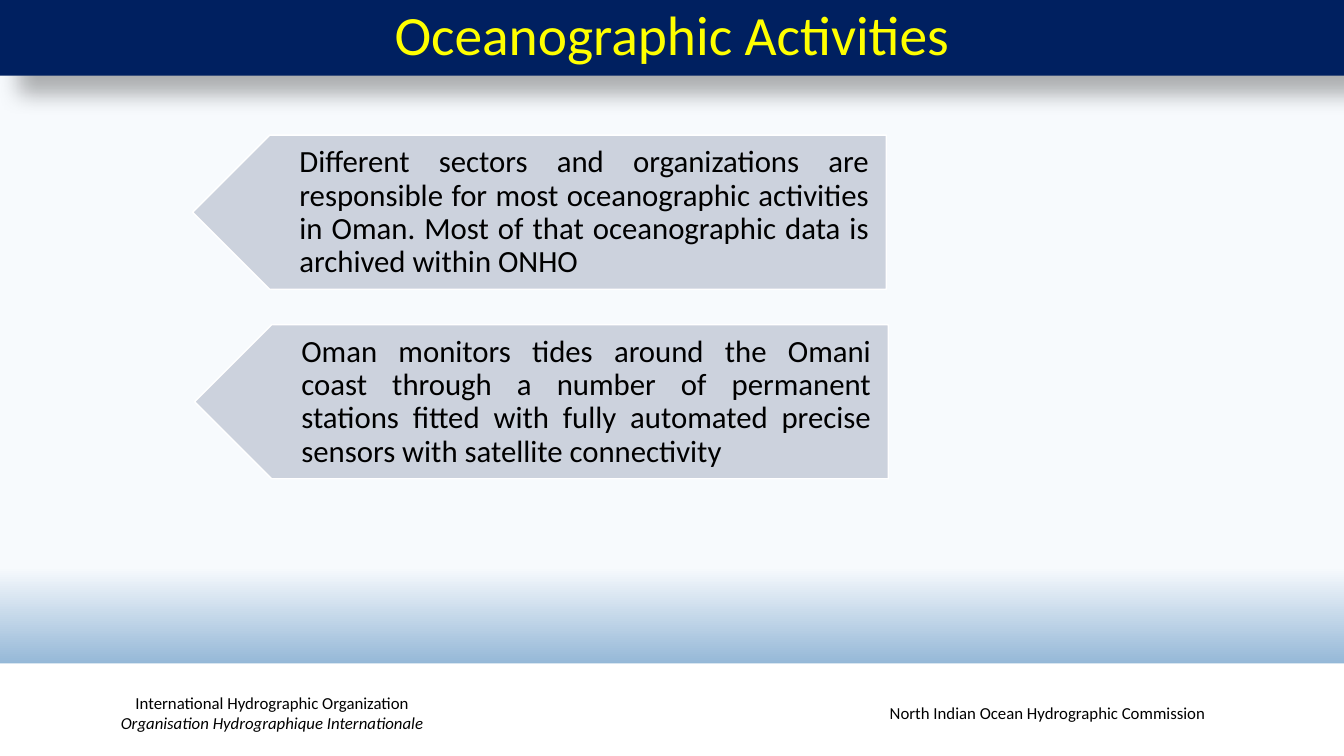
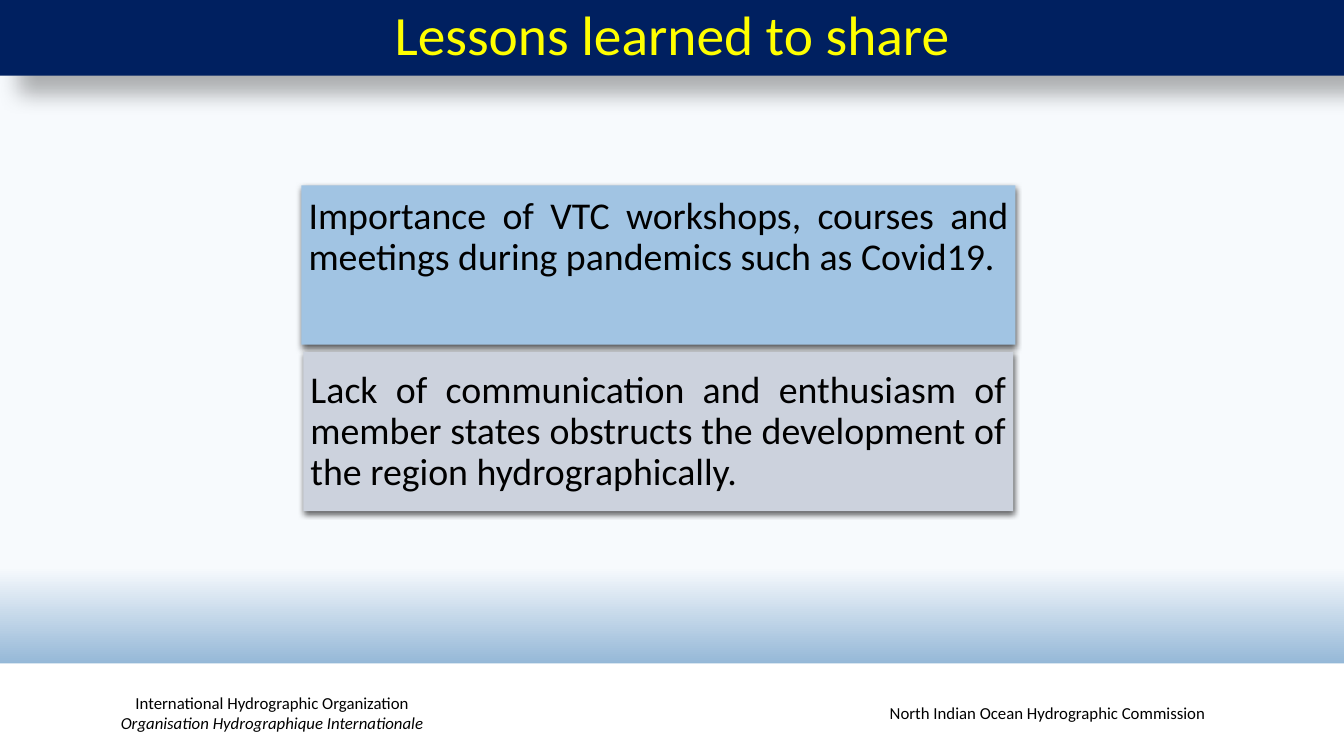
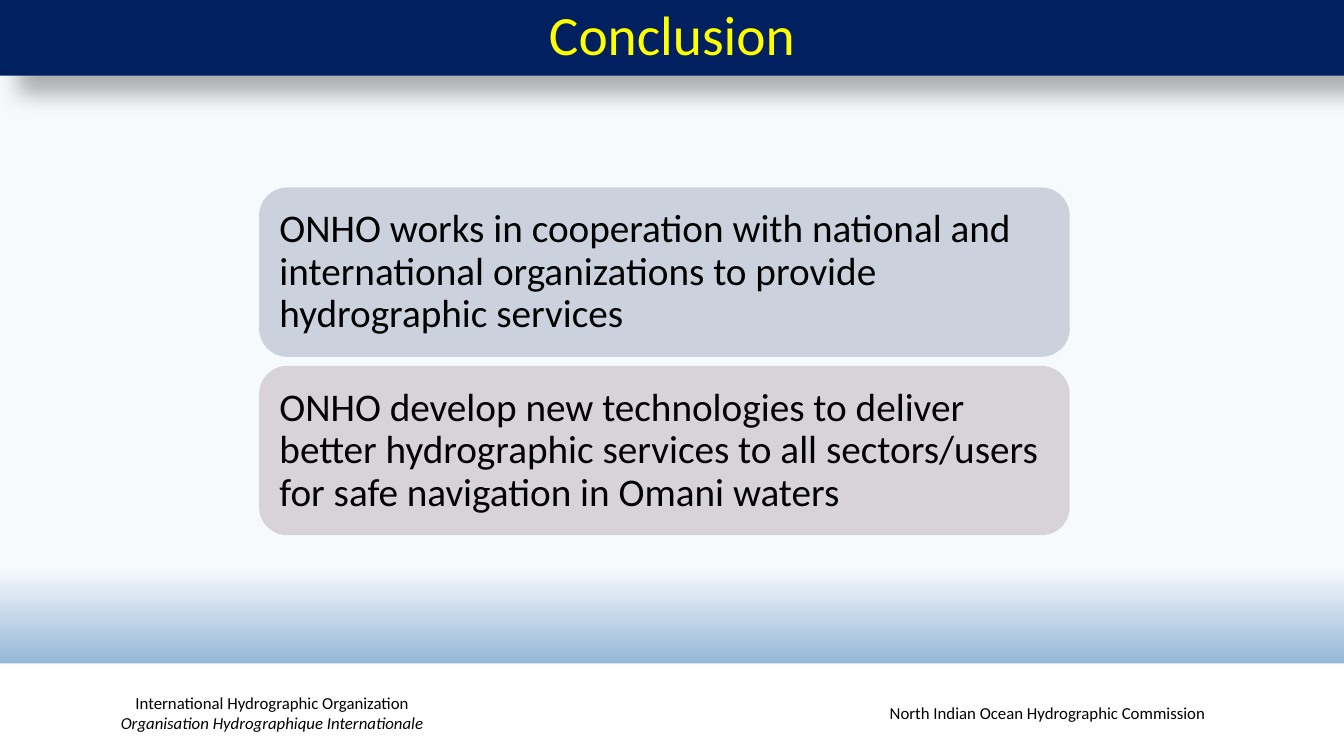
from dataclasses import dataclass, replace
from typing import Optional

from lxml.etree import SubElement
from pptx import Presentation
from pptx.dml.color import RGBColor
from pptx.enum.shapes import MSO_SHAPE
from pptx.enum.text import MSO_ANCHOR, MSO_AUTO_SIZE, PP_ALIGN
from pptx.oxml.ns import qn
from pptx.util import Pt

EMU_PER_PX = 9144
PAGE_WIDTH, PAGE_HEIGHT = 1333, 750
FONT = "Calibri"
COLORS = {
    "sky": "F7FAFD",
    "sea": "3477B2",
    "navy": "002060",
    "yellow": "FFFF00",
    "white": "FFFFFF",
    "black": "000000",
    "gray": "CCD2DD",
    "blue": "A1C4E3",
    "mauve": "D8D3D9",
}


@dataclass(frozen=True)
class Box:
    left: int
    top: int
    width: int
    height: int


@dataclass(frozen=True)
class Shadow:
    opacity: int
    blur: float
    distance: float
    angle: int


@dataclass(frozen=True)
class Span:
    text: str
    italic: bool = False


@dataclass(frozen=True)
class TextStyle:
    size: float
    color: str = "black"
    align: PP_ALIGN = PP_ALIGN.CENTER
    spacing: float = 1.0
    insets: tuple[int, int, int, int] = (10, 5, 10, 5)


@dataclass(frozen=True)
class Card:
    box: Box
    fill: str
    text: str
    style: TextStyle
    kind: MSO_SHAPE = MSO_SHAPE.RECTANGLE
    shadow: Optional[Shadow] = None
    text_box: Optional[Box] = None


@dataclass(frozen=True)
class Page:
    title: str
    cards: tuple[Card, ...]


TITLE_BOX = Box(0, 0, PAGE_WIDTH, 75)
TITLE_STYLE = TextStyle(39.6, "yellow", spacing=0.9)
TITLE_SHADOW = Shadow(30, 15, 18, 45)
FOOTER_BAND = Box(0, 658, PAGE_WIDTH, 92)
FOOTER_STYLE = TextStyle(12)
FOOTERS = (
    (Box(45, 687, 450, 40), (
        Span("International Hydrographic Organization"),
        Span("Organisation Hydrographique Internationale", italic=True),
    )),
    (Box(814, 687, 450, 40), (Span("North Indian Ocean Hydrographic Commission"),)),
)

ARROW_STYLE = TextStyle(22, align=PP_ALIGN.JUSTIFY, spacing=0.9, insets=(68, 10, 17, 9))
LESSON_STYLE = TextStyle(27, align=PP_ALIGN.JUSTIFY, spacing=0.9, insets=(7, 8, 7, 7))
RAISED_STYLE = replace(LESSON_STYLE, insets=(7, 7, 7, 61))
CONCLUSION_STYLE = TextStyle(28, align=PP_ALIGN.LEFT, spacing=0.9, insets=(12, 13, 12, 12))
LESSON_SHADOW = Shadow(63, 4.5, 1.5, 90)


def arrow_card(left: int, top: int, text: str) -> Card:
    return Card(Box(left, top, 688, 153), "gray", text, ARROW_STYLE,
                MSO_SHAPE.PENTAGON, text_box=Box(left + 38, top, 650, 153))


def lesson_card(box: Box, fill: str, text: str, style: TextStyle) -> Card:
    return Card(box, fill, text, style, shadow=LESSON_SHADOW)


def conclusion_card(top: int, fill: str, text: str) -> Card:
    return Card(Box(257, top, 804, 168), fill, text, CONCLUSION_STYLE,
                MSO_SHAPE.ROUNDED_RECTANGLE)


PAGES = (
    Page("Oceanographic Activities", (
        arrow_card(191, 134, "Different sectors and organizations are responsible for most "
                   "oceanographic activities in Oman. Most of that oceanographic data is "
                   "archived within ONHO"),
        arrow_card(193, 322, "Oman monitors tides around the Omani coast through a number of "
                   "permanent stations fitted with fully automated precise sensors with "
                   "satellite connectivity"),
    )),
    Page("Lessons learned to share", (
        lesson_card(Box(299, 184, 708, 158), "blue", "Importance of VTC workshops, courses "
                    "and meetings during pandemics such as Covid19.", RAISED_STYLE),
        lesson_card(Box(301, 349, 704, 158), "gray", "Lack of communication and enthusiasm "
                    "of member states obstructs the development of the region "
                    "hydrographically.", LESSON_STYLE),
    )),
    Page("Conclusion", (
        conclusion_card(186, "gray", "ONHO works in cooperation with national and "
                        "international organizations to provide hydrographic services"),
        conclusion_card(363, "mauve", "ONHO develop new technologies to deliver better "
                        "hydrographic services to all sectors/users for safe navigation "
                        "in Omani waters"),
    )),
)


def px(length: int) -> int:
    return length * EMU_PER_PX


def place(box: Box) -> tuple[int, int, int, int]:
    return px(box.left), px(box.top), px(box.width), px(box.height)


def rgb(name: str) -> RGBColor:
    return RGBColor.from_string(COLORS[name])


def paint(shape, fill: str, shadow: Optional[Shadow] = None) -> None:
    shape.fill.solid()
    shape.fill.fore_color.rgb = rgb(fill)
    shape.line.fill.background()
    shape.shadow.inherit = False
    if shadow:
        effects = shape._element.spPr.find(qn("a:effectLst"))
        outer = SubElement(effects, qn("a:outerShdw"), {
            "blurRad": str(Pt(shadow.blur)),
            "dist": str(Pt(shadow.distance)),
            "dir": str(shadow.angle * 60000),
            "algn": "tl",
            "rotWithShape": "0",
        })
        color = SubElement(outer, qn("a:srgbClr"), val=COLORS["black"])
        SubElement(color, qn("a:alpha"), val=str(shadow.opacity * 1000))


def write(shape, spans: tuple[Span, ...], style: TextStyle) -> None:
    frame = shape.text_frame
    frame.word_wrap = True
    frame.auto_size = MSO_AUTO_SIZE.NONE
    frame.vertical_anchor = MSO_ANCHOR.MIDDLE
    (frame.margin_left, frame.margin_top,
     frame.margin_right, frame.margin_bottom) = map(px, style.insets)
    para = frame.paragraphs[0]
    para.alignment = style.align
    para.line_spacing = style.spacing
    for index, span in enumerate(spans):
        if index:
            para.add_line_break()
        run = para.add_run()
        run.text = span.text
        run.font.name = FONT
        run.font.size = Pt(style.size)
        run.font.color.rgb = rgb(style.color)
        run.font.italic = span.italic


def draw_frame(slide, title_text: str) -> None:
    band = slide.shapes.add_shape(MSO_SHAPE.RECTANGLE, *place(FOOTER_BAND))
    paint(band, "white")
    for box, spans in FOOTERS:
        write(slide.shapes.add_textbox(*place(box)), spans, FOOTER_STYLE)
    title = slide.shapes.title
    title.left, title.top, title.width, title.height = place(TITLE_BOX)
    paint(title, "navy", TITLE_SHADOW)
    write(title, (Span(title_text),), TITLE_STYLE)


def draw_card(slide, card: Card) -> None:
    shape = slide.shapes.add_shape(card.kind, *place(card.box))
    paint(shape, card.fill, card.shadow)
    target = shape
    if card.text_box:
        shape.rotation = 180
        shape.line.color.rgb = rgb("white")
        shape.line.width = Pt(1)
        target = slide.shapes.add_textbox(*place(card.text_box))
    write(target, (Span(card.text),), card.style)


def set_background(master) -> None:
    fill = master.background.fill
    fill.gradient()
    fill.gradient_angle = 270
    for stop, name, position in zip(fill.gradient_stops, ("sky", "sea"), (0.75, 1.0)):
        stop.color.rgb = rgb(name)
        stop.position = position


def main() -> None:
    deck = Presentation()
    deck.slide_width, deck.slide_height = px(PAGE_WIDTH), px(PAGE_HEIGHT)
    set_background(deck.slide_master)
    for page in PAGES:
        slide = deck.slides.add_slide(deck.slide_layouts.get_by_name("Title Only"))
        draw_frame(slide, page.title)
        for card in page.cards:
            draw_card(slide, card)
    deck.save("out.pptx")


if __name__ == "__main__":
    main()
